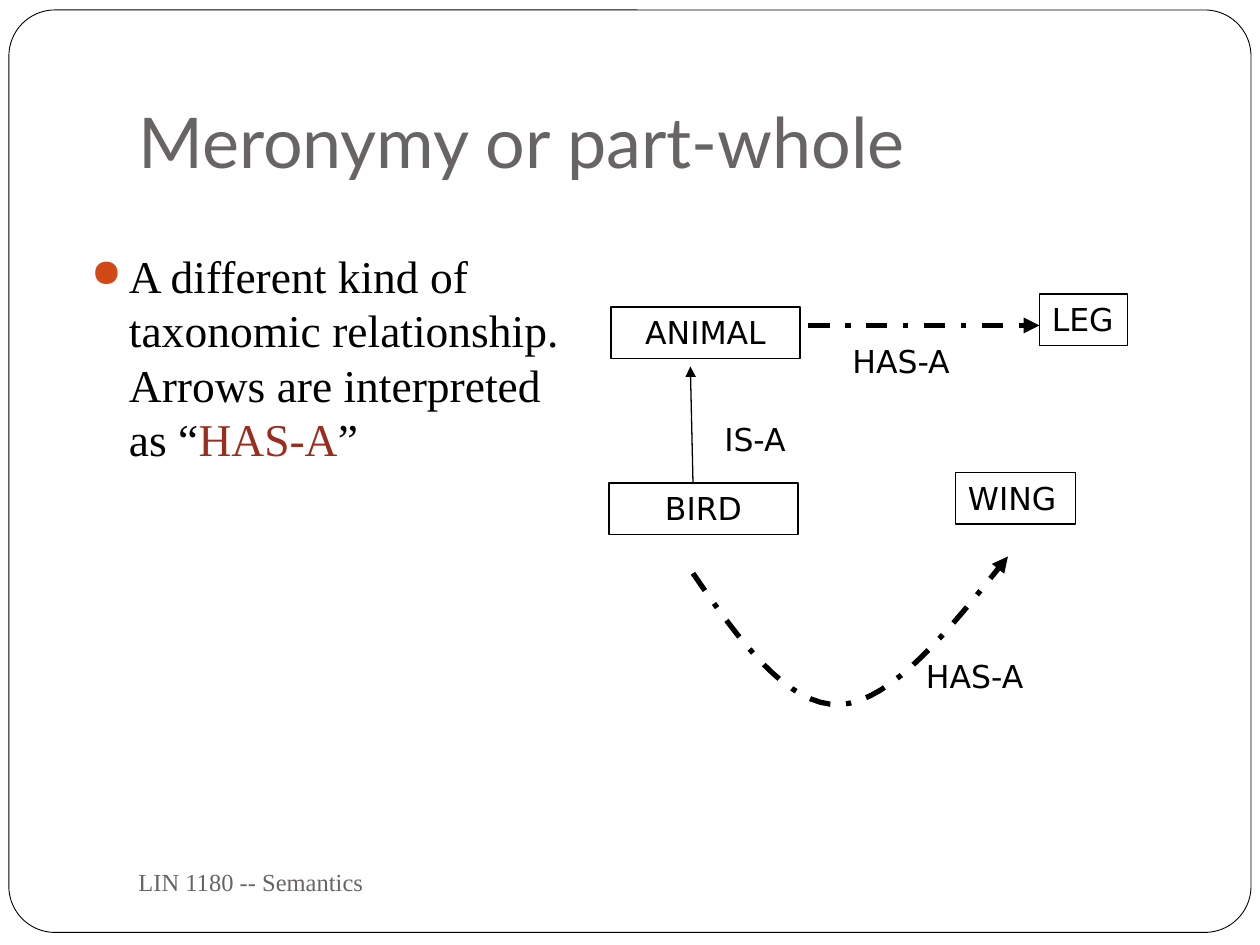
from dataclasses import dataclass

from lxml.etree import SubElement
from pptx import Presentation
from pptx.dml.color import RGBColor
from pptx.enum.dml import MSO_LINE
from pptx.enum.shapes import MSO_CONNECTOR, MSO_SHAPE
from pptx.enum.text import MSO_ANCHOR, MSO_AUTO_SIZE, PP_ALIGN
from pptx.oxml.ns import qn
from pptx.util import Inches, Pt


@dataclass(frozen=True)
class Theme:
    ink: str = "000000"
    paper: str = "FFFFFF"
    gray: str = "696464"
    dot: str = "D34817"
    mark: str = "9B2D1F"
    head: str = "Lato"
    serif: str = "Times New Roman"
    sans: str = "DejaVu Sans"
    title: int = 40
    body: int = 26
    label: int = 18
    foot: int = 14
    frame: float = 0.5
    thin: float = 0.75
    thick: int = 3


THEME = Theme()
COLS, ROWS = 120, 90
CELL = Inches(10) // COLS
GROW = {"auto_size": MSO_AUTO_SIZE.SHAPE_TO_FIT_TEXT}


def grid(*cells):
    return [round(cell * CELL) for cell in cells]


def apply(target, values):
    for name, value in values.items():
        setattr(target, name, value)


def write(shape, runs, font, size, frame=None, para=None):
    text = shape.text_frame
    apply(text, {"word_wrap": True, "vertical_anchor": MSO_ANCHOR.TOP, **(frame or {})})
    first = text.paragraphs[0]
    apply(first, {"alignment": PP_ALIGN.LEFT, **(para or {})})
    for words, color in runs:
        run = first.add_run()
        run.text = words
        apply(run.font, {"name": font, "size": Pt(size)})
        run.font.color.rgb = RGBColor.from_string(color)
    return first


def stroke(shape, width, dash=None, tip=None):
    line = shape.line
    line.color.rgb = RGBColor.from_string(THEME.ink)
    apply(line, {"width": Pt(width), "dash_style": dash})
    if tip:
        SubElement(line._ln, qn(f"a:{tip}End"), type="triangle")


def add_frame(slide):
    shape = slide.shapes.add_shape(MSO_SHAPE.ROUNDED_RECTANGLE, *grid(0.85, 0.95, 118.3, 87.85))
    shape.adjustments[0] = 0.05
    shape.shadow.inherit = False
    shape.fill.solid()
    shape.fill.fore_color.rgb = RGBColor.from_string(THEME.paper)
    stroke(shape, THEME.frame)


def add_text(slide, cells, runs, font, size, frame=None, para=None):
    return write(slide.shapes.add_textbox(*grid(*cells)), runs, font, size, frame, para)


def add_bullet(para):
    props = para._p.get_or_add_pPr()
    indent = Inches(0.3)
    apply(para, {"space_before": Pt(5.8)})
    props.set("marL", str(indent))
    props.set("indent", str(-indent))
    color = SubElement(props, qn("a:buClr"))
    SubElement(color, qn("a:srgbClr"), val=THEME.dot)
    SubElement(props, qn("a:buSzPct"), val="85000")
    SubElement(props, qn("a:buChar"), char="●")


def add_node(slide, words, left, top, width, wrap):
    shape = slide.shapes.add_shape(MSO_SHAPE.RECTANGLE, *grid(left, top, width, 4.9))
    shape.shadow.inherit = False
    shape.fill.background()
    stroke(shape, THEME.thin)
    align = PP_ALIGN.CENTER if wrap else PP_ALIGN.LEFT
    write(shape, [(words, THEME.ink)], THEME.sans, THEME.label,
          {"word_wrap": wrap, **GROW}, {"alignment": align})


def add_arrow(slide, cells, width, dash, tip):
    line = slide.shapes.add_connector(MSO_CONNECTOR.STRAIGHT, *grid(*cells))
    stroke(line, width, dash, tip)
    SubElement(line._element.spPr, qn("a:effectLst"))


def bezier(knots, steps=16):
    for step in range(1, steps + 1):
        t = step / steps
        shares = ((1 - t) ** 3, 3 * t * (1 - t) ** 2, 3 * t ** 2 * (1 - t), t ** 3)
        yield grid(*(sum(s * k for s, k in zip(shares, axis)) for axis in zip(*knots)))


def add_curve(slide, knots):
    start = grid(*knots[0])
    build = slide.shapes.build_freeform(*start)
    points = [p for i in range(0, len(knots) - 1, 3) for p in bezier(knots[i:i + 4])]
    build.add_line_segments(points, close=False)
    shape = build.convert_to_shape()
    shape.shadow.inherit = False
    shape.fill.background()
    stroke(shape, THEME.thick, MSO_LINE.DASH_DOT, "tail")


def main():
    deck = Presentation()
    apply(deck, {"slide_width": COLS * CELL, "slide_height": ROWS * CELL})
    slide = deck.slides.add_slide(deck.slide_layouts[6])
    add_frame(slide)
    add_text(slide, (12, 3.6, 102, 15), [("Meronymy or part-whole", THEME.gray)],
             THEME.head, THEME.title,
             {"vertical_anchor": MSO_ANCHOR.BOTTOM, "margin_bottom": Inches(0.1)})
    add_text(slide, (12, 81, 52, 6), [("LIN 1180 -- Semantics", THEME.gray)],
             THEME.serif, THEME.foot, {"vertical_anchor": MSO_ANCHOR.MIDDLE})
    body = [("A different kind of taxonomic relationship. Arrows are interpreted as “", THEME.ink),
            ("HAS-A", THEME.mark), ("”", THEME.ink)]
    add_bullet(add_text(slide, (7.5, 23, 48.6, 56), body, THEME.serif, THEME.body))

    for node in (("ANIMAL", 58.2, 29.25, 18, True), ("BIRD", 58, 46, 18, True),
                 ("WING", 91, 45, 11.4, False), ("LEG", 99, 28, 8.4, False)):
        add_node(slide, *node)
    add_arrow(slide, (65.75, 34.9, 66, 46), THEME.thin, None, "head")
    add_arrow(slide, (77, 31, 99, 31), THEME.thick, MSO_LINE.DASH_DOT, "tail")
    add_curve(slide, [(66, 54.6), (70.4, 61), (75, 67.3), (80, 67.1),
                      (85, 66.8), (90.5, 59.9), (96, 53)])
    for words, left, top, width in (("HAS-A", 87, 62, 12.1), ("IS-A", 67.8, 39.4, 9.1),
                                    ("HAS-A", 80, 32, 12.1)):
        add_text(slide, (left, top, width, 4.8), [(words, THEME.ink)],
                 THEME.sans, THEME.label, {"word_wrap": False, **GROW})
    deck.save("out.pptx")


if __name__ == "__main__":
    main()
